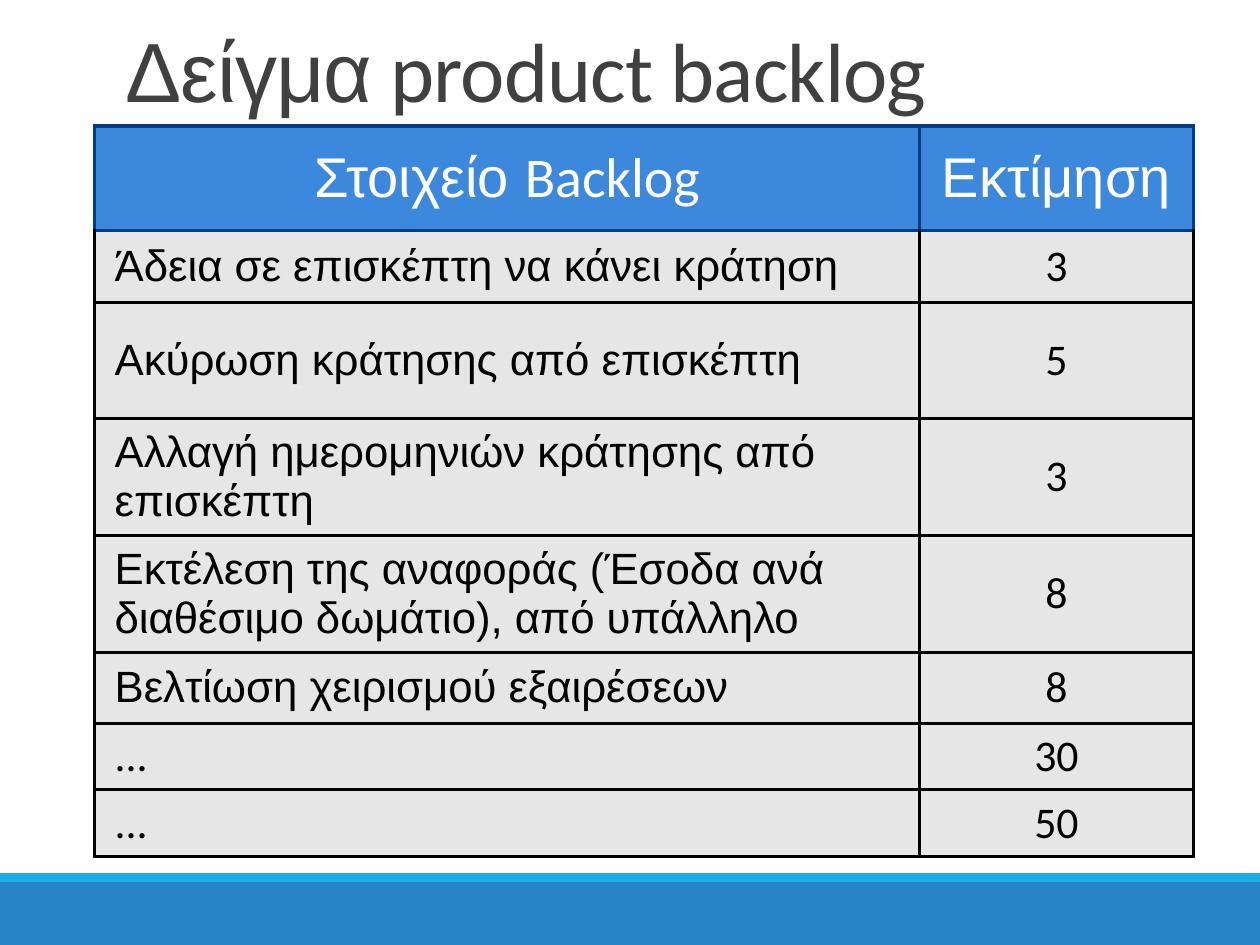
from dataclasses import dataclass

from lxml import etree
from pptx import Presentation
from pptx.dml.color import RGBColor
from pptx.enum.shapes import MSO_SHAPE
from pptx.enum.text import MSO_ANCHOR, PP_ALIGN
from pptx.oxml.ns import qn
from pptx.util import Inches, Pt

RECT = MSO_SHAPE.RECTANGLE
MIDDLE, BOTTOM = MSO_ANCHOR.MIDDLE, MSO_ANCHOR.BOTTOM
LEFT, CENTER = PP_ALIGN.LEFT, PP_ALIGN.CENTER
GREEK, LATIN = "Arial", "Calibri"
HEAD_LINE, BODY_LINE = "003C83", "000000"


@dataclass
class Band:
    top: float
    height: float
    color: str


@dataclass
class Item:
    name: str
    estimate: str
    height: float
    font: str = GREEK


@dataclass
class CellStyle:
    size: float
    color: str
    fill: str
    line: str
    top_line: str


BANDS = [Band(7, 0.5, "2683C6"), Band(6.93, 0.07, "1CADE4")]
HEAD_HEIGHT = 0.83
ITEMS = [
    Item("Άδεια σε επισκέπτη να κάνει κράτηση", "3", 0.57),
    Item("Ακύρωση κράτησης από επισκέπτη", "5", 0.92),
    Item("Αλλαγή ημερομηνιών κράτησης από επισκέπτη", "3", 0.93),
    Item("Εκτέλεση της αναφοράς (Έσοδα ανά διαθέσιμο δωμάτιο), από υπάλληλο", "8", 0.93),
    Item("Βελτίωση χειρισμού εξαιρέσεων", "8", 0.56),
    Item("...", "30", 0.53, LATIN),
    Item("...", "50", 0.53, LATIN),
]
HEAD = CellStyle(32, "FFFFFF", "3C88DC", HEAD_LINE, HEAD_LINE)
FIRST = CellStyle(25, "000000", "E6E6E6", BODY_LINE, HEAD_LINE)
BODY = CellStyle(25, "000000", "E6E6E6", BODY_LINE, BODY_LINE)


def rgb(color: str) -> RGBColor:
    return RGBColor.from_string(color)


def add_runs(p, runs: list[tuple[str, str]], size: float, color: str) -> None:
    for text, font in runs:
        r = p.add_run()
        r.text = text
        r.font.name = font
        r.font.size = Pt(size)
        r.font.color.rgb = rgb(color)


def add_band(s, band: Band) -> None:
    sp = s.shapes.add_shape(RECT, 0, Inches(band.top), Inches(10), Inches(band.height))
    sp.shadow.inherit = False
    sp.fill.solid()
    sp.fill.fore_color.rgb = rgb(band.color)
    sp.line.fill.background()


def add_title(s) -> None:
    sp = s.shapes.add_textbox(Inches(0.9), Inches(0.11), Inches(8.25), Inches(0.89))
    tf = sp.text_frame
    tf.word_wrap = True
    tf.vertical_anchor = BOTTOM
    p = tf.paragraphs[0]
    p.line_spacing = 0.85
    add_runs(p, [("Δείγμα", GREEK), (" product backlog", LATIN)], 48, "404040")
    for r in p.runs:
        r.font._element.set("spc", "-50")


def set_borders(cell, style: CellStyle) -> None:
    tc_pr = cell._tc.get_or_add_tcPr()
    for side in ("lnL", "lnR", "lnT", "lnB"):
        ln = etree.SubElement(tc_pr, qn(f"a:{side}"), w=str(Pt(2)))
        fill = etree.SubElement(ln, qn("a:solidFill"))
        color = style.top_line if side == "lnT" else style.line
        etree.SubElement(fill, qn("a:srgbClr"), val=color)


def fill_cell(cell, runs: list[tuple[str, str]], style: CellStyle, align) -> None:
    set_borders(cell, style)
    cell.fill.solid()
    cell.fill.fore_color.rgb = rgb(style.fill)
    cell.vertical_anchor = MIDDLE
    cell.margin_left = cell.margin_right = Inches(0.04)
    cell.margin_top = cell.margin_bottom = Inches(0.04)
    p = cell.text_frame.paragraphs[0]
    p.alignment = align
    if align == LEFT:
        p._p.get_or_add_pPr().set("marL", str(Inches(0.12)))
    add_runs(p, runs, style.size, style.color)


def add_backlog(s) -> None:
    heights = [HEAD_HEIGHT] + [item.height for item in ITEMS]
    frame = s.shapes.add_table(len(heights), 2, Inches(0.75), Inches(1),
                               Inches(8.72), Inches(sum(heights)))
    table = frame.table
    table.first_row = table.horz_banding = False
    for col, width in zip(table.columns, (6.55, 2.17)):
        col.width = Inches(width)
    for row, height in zip(table.rows, heights):
        row.height = Inches(height)

    # Header row
    fill_cell(table.cell(0, 0), [("Στοιχείο ", GREEK), ("Backlog", LATIN)], HEAD, CENTER)
    fill_cell(table.cell(0, 1), [("Εκτίμηση", GREEK)], HEAD, CENTER)

    # Backlog items
    for i, item in enumerate(ITEMS, start=1):
        style = FIRST if i == 1 else BODY
        fill_cell(table.cell(i, 0), [(item.name, item.font)], style, LEFT)
        fill_cell(table.cell(i, 1), [(item.estimate, LATIN)], style, CENTER)


def main() -> None:
    prs = Presentation()
    prs.slide_width, prs.slide_height = Inches(10), Inches(7.5)
    s = prs.slides.add_slide(prs.slide_layouts[6])
    for band in BANDS:
        add_band(s, band)
    add_title(s)
    add_backlog(s)
    prs.save("out.pptx")


if __name__ == "__main__":
    main()
